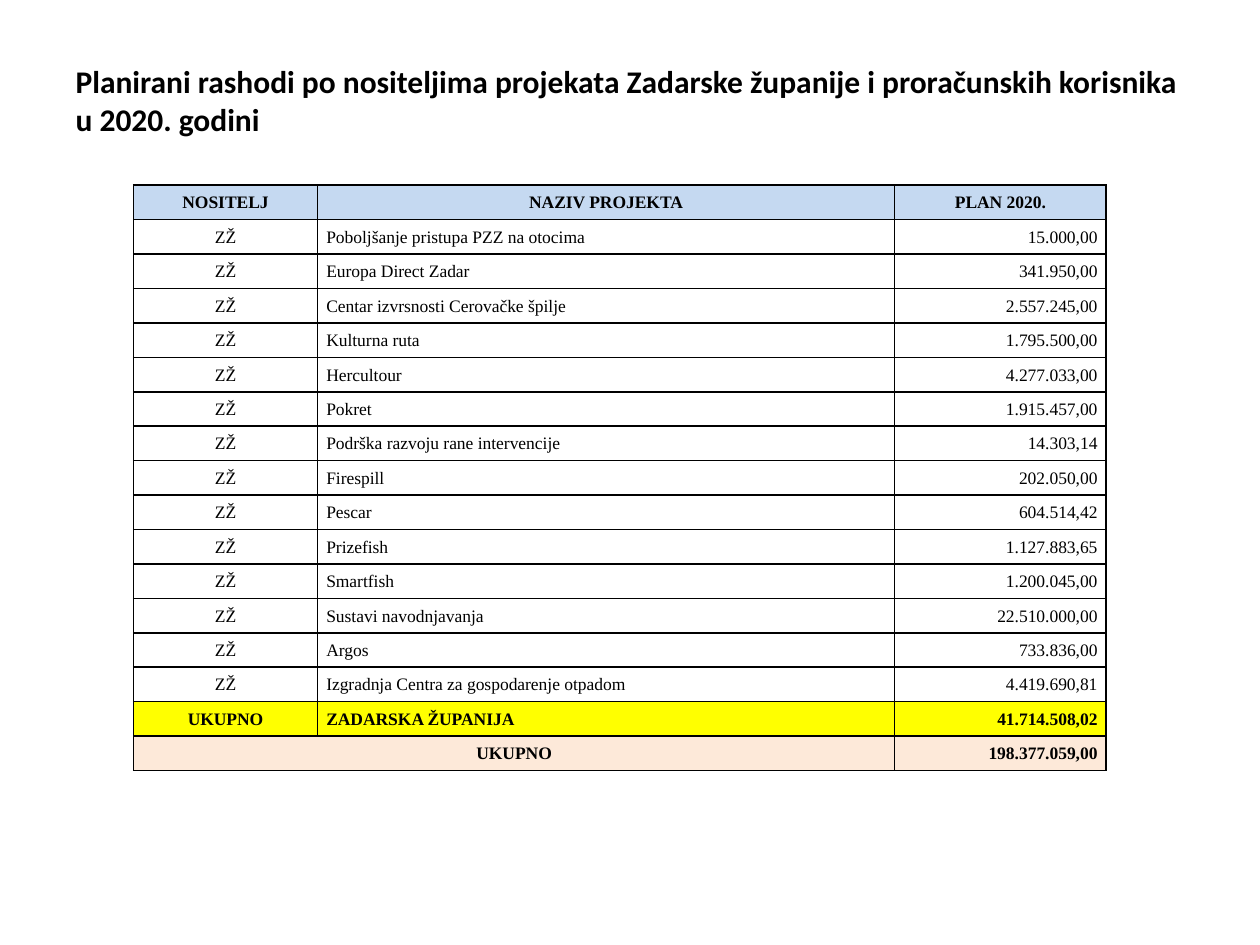
from lxml import etree
from pptx import Presentation, util as u
from pptx.dml.color import RGBColor
from pptx.enum import text
from pptx.oxml.ns import qn

BLACK = RGBColor(0x00, 0x00, 0x00)
WHITE = RGBColor(0xFF, 0xFF, 0xFF)
HEADER_BLUE = RGBColor(0xC5, 0xD9, 0xF1)
SUBTOTAL_YELLOW = RGBColor(0xFF, 0xFF, 0x00)
TOTAL_PEACH = RGBColor(0xFD, 0xE9, 0xD9)

LEFT, CENTER, RIGHT = text.PP_ALIGN.LEFT, text.PP_ALIGN.CENTER, text.PP_ALIGN.RIGHT
COLUMN_WIDTHS = (1.46, 4.58, 1.68)
BODY_ALIGNMENT = (CENTER, LEFT, RIGHT)

TITLE = ("Planirani rashodi po nositeljima projekata Zadarske županije "
         "i proračunskih korisnika u 2020. godini")
HEADINGS = ("NOSITELJ", "NAZIV PROJEKTA", "PLAN 2020.")
PROJECTS = (
    ("Poboljšanje pristupa PZZ na otocima", "15.000,00"),
    ("Europa Direct Zadar", "341.950,00"),
    ("Centar izvrsnosti Cerovačke špilje", "2.557.245,00"),
    ("Kulturna ruta", "1.795.500,00"),
    ("Hercultour", "4.277.033,00"),
    ("Pokret", "1.915.457,00"),
    ("Podrška razvoju rane intervencije", "14.303,14"),
    ("Firespill", "202.050,00"),
    ("Pescar", "604.514,42"),
    ("Prizefish", "1.127.883,65"),
    ("Smartfish", "1.200.045,00"),
    ("Sustavi navodnjavanja", "22.510.000,00"),
    ("Argos", "733.836,00"),
    ("Izgradnja Centra za gospodarenje otpadom", "4.419.690,81"),
)
SUBTOTAL = ("UKUPNO", "ZADARSKA ŽUPANIJA", "41.714.508,02")
TOTAL = ("UKUPNO", "", "198.377.059,00")


def style_font(font, name, size, bold):
    font.name, font.size, font.bold = name, u.Pt(size), bold
    font.color.rgb = BLACK


def add_title(slide, left, top, width, height):
    title = slide.shapes.title
    title.left, title.top = u.Inches(left), u.Inches(top)
    title.width, title.height = u.Inches(width), u.Inches(height)
    frame = title.text_frame
    frame.text = TITLE
    frame.vertical_anchor = text.MSO_ANCHOR.MIDDLE
    frame.margin_bottom = u.Inches(0.31)
    paragraph = frame.paragraphs[0]
    paragraph.alignment = LEFT
    style_font(paragraph.font, "Calibri", 18, True)


def add_borders(cell):
    properties = cell._tc.get_or_add_tcPr()
    for side in ("a:lnL", "a:lnR", "a:lnT", "a:lnB"):
        line = etree.SubElement(properties, qn(side), w=str(u.Pt(1)))
        fill = etree.SubElement(line, qn("a:solidFill"))
        etree.SubElement(fill, qn("a:srgbClr"), val=str(BLACK))


def fill_cell(cell, wording, alignment, bold, color):
    add_borders(cell)
    cell.fill.solid()
    cell.fill.fore_color.rgb = color
    cell.margin_left = cell.margin_right = u.Inches(0.07)
    cell.margin_top = cell.margin_bottom = 0
    cell.vertical_anchor = text.MSO_ANCHOR.MIDDLE
    cell.text = wording
    paragraph = cell.text_frame.paragraphs[0]
    paragraph.alignment = alignment
    paragraph.line_spacing = 1.07
    style_font(paragraph.font, "Times New Roman", 10, bold)


def add_expense_table(slide, left, top, height):
    rows = [(HEADINGS, (CENTER,) * 3, True, HEADER_BLUE)]
    rows += [(("ZŽ", *project), BODY_ALIGNMENT, False, WHITE) for project in PROJECTS]
    rows += [(SUBTOTAL, BODY_ALIGNMENT, True, SUBTOTAL_YELLOW),
             (TOTAL, BODY_ALIGNMENT, True, TOTAL_PEACH)]

    table = slide.shapes.add_table(
        len(rows), len(COLUMN_WIDTHS), u.Inches(left), u.Inches(top),
        u.Inches(sum(COLUMN_WIDTHS)), u.Inches(height)).table
    table.horz_banding = False
    for column, width in zip(table.columns, COLUMN_WIDTHS):
        column.width = u.Inches(width)
    for row, (wordings, alignments, bold, color) in zip(table.rows, rows):
        for cell, wording, alignment in zip(row.cells, wordings, alignments):
            fill_cell(cell, wording, alignment, bold, color)
    last = len(rows) - 1
    table.cell(last, 0).merge(table.cell(last, 1))


def main():
    deck = Presentation()
    deck.slide_width, deck.slide_height = u.Inches(10), u.Inches(7.5)
    slide = deck.slides.add_slide(deck.slide_layouts.get_by_name("Title Only"))
    add_title(slide, 0.5, 0.3, 9, 1.25)
    add_expense_table(slide, 1.06, 1.47, 4.65)
    deck.save("out.pptx")


if __name__ == "__main__":
    main()
